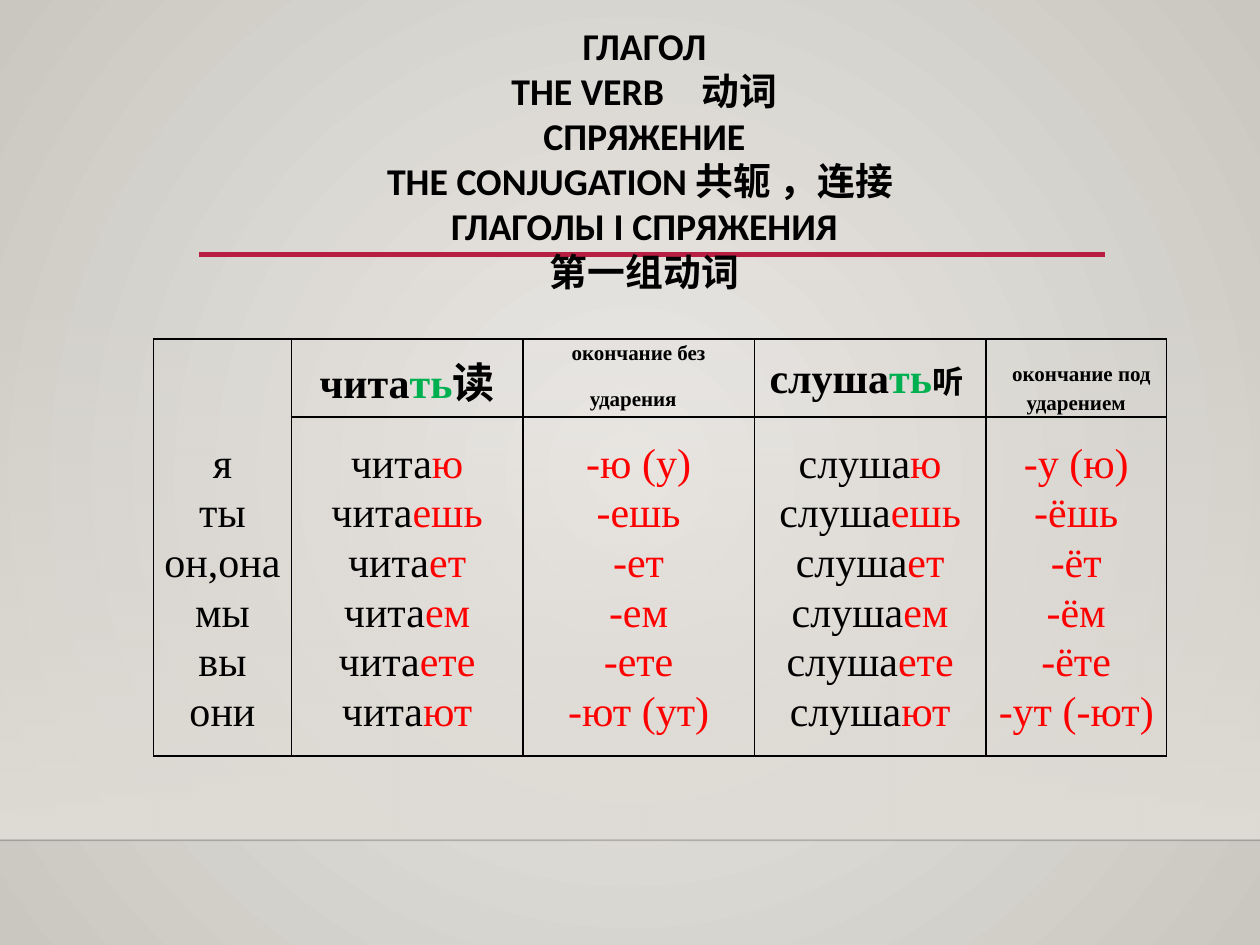
from lxml.etree import SubElement as Sub
from pptx import Presentation
from pptx.dml.color import RGBColor
from pptx.enum.shapes import MSO_CONNECTOR as Conn, MSO_SHAPE as Kind
from pptx.enum.text import MSO_ANCHOR as Anchor, MSO_AUTO_SIZE as Auto, PP_ALIGN as Align
from pptx.oxml import parse_xml
from pptx.oxml.ns import nsdecls, qn
from pptx.util import Pt

BLACK, RED, GREEN = "000000", "FF0000", "00B050"
SERIF, SANS, HAN = "Times New Roman", "Calibri", "Noto Sans CJK SC"

TITLE = [
    [("ГЛАГОЛ", SANS)],
    [("THE VERB", SANS), ("　动词", HAN)],
    [("СПРЯЖЕНИЕ", SANS)],
    [("THE CONJUGATION ", SANS), ("共轭 ，连接 ", HAN)],
    [("ГЛАГОЛЫ I СПРЯЖЕНИЯ", SANS)],
    [("第一组动词", HAN)],
]
# Each header cell is a list of lines, each line a list of (text, format)
SMALL = {"size": 12}
HEADS = [
    [],
    [[("чита", {}), ("ть", {"color": GREEN}), ("读", {})]],
    [[("окончание без ударения", SMALL), (" ", {})]],
    [[("слуша", {}), ("ть", {"color": GREEN}), ("听 ", {"size": 18, "font": SANS})]],
    [[(" ", {}), ("окончание под", SMALL)], [("ударением", SMALL)]],
]
WHO = ["я", "ты", "он,она", "мы", "вы", "они"]
ENDS = ["ю", "ешь", "ет", "ем", "ете", "ют"]
PLAIN = ["-ю (у)", "-ешь", "-ет", "-ем", "-ете", "-ют (ут)"]
STRESS = ["-у (ю)", "-ёшь", "-ёт", "-ём", "-ёте", "-ут (-ют)"]


def rgb(code):
    return RGBColor.from_string(code)


def put(par, text, size=24, color=BLACK, bold=False, font=SERIF):
    run = par.add_run()
    run.text = text
    face = run.font
    face.size, face.bold, face.name = Pt(size), bold, font
    face.color.rgb = rgb(color)


def fade(node, alpha):
    Sub(node.find(".//" + qn("a:srgbClr")), qn("a:alpha"), val=str(alpha * 1000))


def blend(fill, *codes):
    fill.gradient()
    for stop, code, pos in zip(fill.gradient_stops, codes, (0, 1)):
        stop.color.rgb = rgb(code)
        stop.position = pos


def rule(slide, left, right, y, color, width):
    line = slide.shapes.add_connector(Conn.STRAIGHT, Pt(left), Pt(y), Pt(right), Pt(y))
    line.line.color.rgb = rgb(color)
    line.line.width = Pt(width)
    Sub(line._element.spPr, qn("a:effectLst"))
    return line


def backdrop(slide):
    # Radial background
    blend(slide.background.fill, "ECEAE7", "CAC7C1")
    grad = slide._element.find(".//" + qn("a:gradFill"))
    grad.replace(grad.find(qn("a:lin")), parse_xml(
        f'<a:path {nsdecls("a")} path="circle">'
        '<a:fillToRect l="50000" t="50000" r="50000" b="50000"/></a:path>'))
    # Panel that fades in downwards
    panel = slide.shapes.add_shape(Kind.RECTANGLE, 0, Pt(158.4), Pt(720), Pt(321.4))
    panel.shadow.inherit = False
    panel.line.fill.background()
    blend(panel.fill, "DFDBD5", "DFDBD5")
    panel.fill.gradient_angle = 270
    fade(panel._element.find(".//" + qn("a:gs")), 0)
    # Floor line and title rule
    floor = rule(slide, 0, 720, 480.2, "000001", 1)
    fade(floor._element.find(".//" + qn("a:ln")), 20)
    rule(slide, 113.8, 631.4, 145.4, "B71E42", 2.5)


def heading(slide):
    title = slide.shapes.title
    title.left, title.top, title.width, title.height = Pt(121.7), Pt(9.4), Pt(493.2), Pt(169.9)
    frame = title.text_frame
    frame.auto_size, frame.vertical_anchor = Auto.NONE, Anchor.TOP
    par = frame.paragraphs[0]
    par.alignment, par.line_spacing = Align.CENTER, Pt(25.8)
    for i, parts in enumerate(TITLE):
        if i:
            par.add_line_break()
        for text, font in parts:
            put(par, text, size=21.6, bold=True, font=font)
    slide.shapes._spTree.append(title._element)  # in front of the rule


def border(cell, skip):
    props = cell._tc.get_or_add_tcPr()
    for i, side in enumerate("LRTB"):
        paint = ("<a:noFill/>" if side == skip else
                 f'<a:solidFill><a:srgbClr val="{BLACK}"/></a:solidFill>')
        props.insert(i, parse_xml(
            f'<a:ln{side} {nsdecls("a")} w="{Pt(1)}">{paint}</a:ln{side}>'))


def fill_cell(cell, lines, bold=False, skip=""):
    cell.fill.background()
    border(cell, skip)
    cell.vertical_anchor = Anchor.MIDDLE
    cell.margin_left = cell.margin_right = Pt(5)
    cell.margin_top = cell.margin_bottom = 0
    frame = cell.text_frame
    for i, parts in enumerate(lines):
        par = frame.add_paragraph() if i else frame.paragraphs[0]
        par.alignment, par.line_spacing = Align.CENTER, 1.07
        for text, form in parts:
            put(par, text, bold=bold, **form)


def forms(stem):
    return [[(stem, {}), (end, {"color": RED})] for end in ENDS]


def column(words, color=BLACK):
    return [[(word, {"color": color})] for word in words]


def verbs(slide):
    table = slide.shapes.add_table(2, 5, Pt(87.8), Pt(193.7), Pt(578.9), Pt(238.3)).table
    table.first_row = table.horz_banding = False
    for col, width in zip(table.columns, (78.7, 132.3, 132.3, 132.3, 103.3)):
        col.width = Pt(width)
    for row, height in zip(table.rows, (44.6, 193.7)):
        row.height = Pt(height)
    body = [column(WHO), forms("чита"), column(PLAIN, RED),
            forms("слуша"), column(STRESS, RED)]
    for i, (head, lines) in enumerate(zip(HEADS, body)):
        # The first column has no line between its two cells
        fill_cell(table.cell(0, i), head, bold=True, skip="" if i else "B")
        fill_cell(table.cell(1, i), lines, skip="" if i else "T")


def main():
    deck = Presentation()
    deck.slide_width, deck.slide_height = Pt(720), Pt(540)
    slide = deck.slides.add_slide(deck.slide_layouts[5])
    backdrop(slide)
    heading(slide)
    verbs(slide)
    deck.save("out.pptx")


if __name__ == "__main__":
    main()
